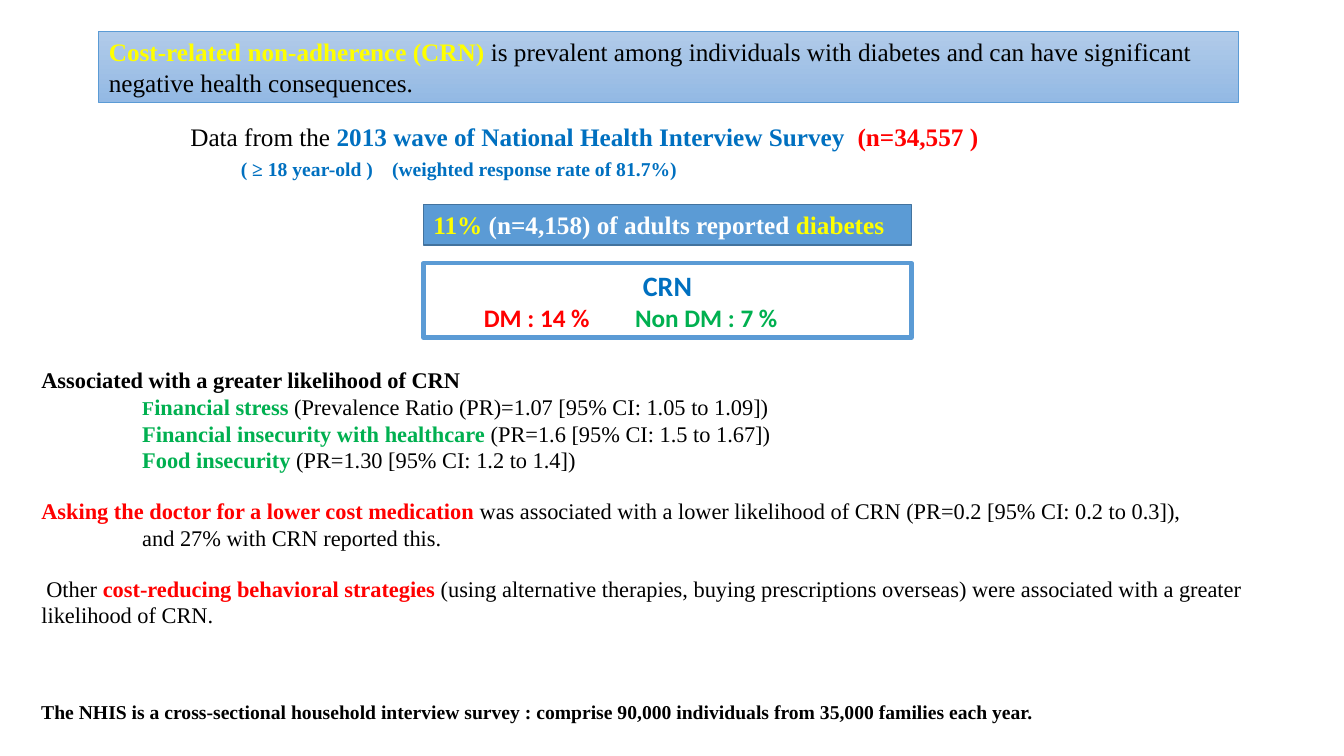
from lxml.etree import SubElement
from pptx import Presentation
from pptx.dml.color import RGBColor
from pptx.enum.shapes import MSO_SHAPE as Shape
from pptx.enum.text import MSO_ANCHOR as Anchor, MSO_AUTO_SIZE as AutoSize, PP_ALIGN as Align
from pptx.oxml.ns import qn
from pptx.util import Inches, Pt

BLACK = RGBColor(0x00, 0x00, 0x00)
WHITE = RGBColor(0xFF, 0xFF, 0xFF)
YELLOW = RGBColor(0xFF, 0xFF, 0x00)
RED = RGBColor(0xFF, 0x00, 0x00)
GREEN = RGBColor(0x00, 0xB0, 0x50)
BLUE = RGBColor(0x00, 0x70, 0xC0)
ACCENT = RGBColor(0x5B, 0x9B, 0xD5)
ACCENT_DARK = RGBColor(0x43, 0x73, 0x9E)
BANNER_TOP = RGBColor(0xB1, 0xCB, 0xE9)
BANNER_BOTTOM = RGBColor(0x93, 0xB9, 0xE4)
SERIF, SANS = "Times New Roman", "Calibri"

# Each run: text, size, colour, bold
BANNER = [{"runs": [
    ("Cost-related non-adherence (CRN)", 18, YELLOW, True),
    (" is prevalent among individuals with diabetes and can have significant "
     "negative health consequences.", 18, BLACK, False)]}]
SURVEY = [
    {"runs": [("Data from the ", 18, BLACK, False),
              ("2013 wave of National Health Interview Survey  ", 18, BLUE, True),
              ("(n=34,557 )", 18, RED, True)]},
    {"runs": [("\t( ≥ 18 year-old )\t(weighted response rate of 81.7%)", 14, BLUE, True),
              (" ", 18, BLUE, True)],
     "tabs": (2, 3.7)}]
DIABETES = [{"runs": [("11%", 18, YELLOW, True),
                      (" (n=4,158) of adults reported ", 18, WHITE, True),
                      ("diabetes", 18, YELLOW, True)]}]
RATES = [
    {"runs": [("CRN", 20, BLUE, True)], "align": Align.CENTER},
    {"runs": [("\tDM : 14 %", 18, RED, True), ("\tNon DM : 7 %", 18, GREEN, True)],
     "tabs": (0.17, 3.15)}]
FINDINGS = [
    {"runs": [("Associated with a greater likelihood of CRN", 16, BLACK, True)]},
    {"runs": [("F", 14, GREEN, True), ("inancial stress ", 16, GREEN, True),
              ("(Prevalence Ratio (PR)=1.07 [95% CI: 1.05 to 1.09])", 16, BLACK, False)],
     "indent": 1},
    {"runs": [("Financial insecurity with healthcare ", 16, GREEN, True),
              ("(PR=1.6 [95% CI: 1.5 to 1.67])", 16, BLACK, False)], "indent": 1},
    {"runs": [("Food insecurity", 16, GREEN, True),
              (" (PR=1.30 [95% CI: 1.2 to 1.4])", 16, BLACK, False)], "indent": 1},
    {"runs": [("Asking the doctor for a lower cost medication ", 16, RED, True),
              ("was associated with a lower likelihood of CRN (PR=0.2 [95% CI: 0.2 to 0.3]),",
               16, BLACK, False)], "before": 17},
    {"runs": [("and 27% with CRN reported this.", 16, BLACK, False)], "indent": 1},
    {"runs": [(" ", 14, BLACK, False), ("Other ", 16, BLACK, False),
              ("cost-reducing behavioral strategies ", 16, RED, True),
              ("(using alternative therapies, buying prescriptions overseas) were associated "
               "with a greater likelihood of CRN.", 16, BLACK, False)], "before": 17}]
FOOTNOTE = [{"runs": [
    ("The NHIS is a cross-sectional household interview survey : comprise 90,000 individuals "
     "from 35,000 families each year.", 14, BLACK, True)]}]

# Left, top, width, height as percentages of the slide
BANNER_BOX = (7.35, 4.13, 84.77, 9.47)
SURVEY_BOX = (13.43, 15.33, 76.37, 9.47)
DIABETES_BOX = (31.51, 27.07, 36.31, 5.33)
RATES_BOX = (31.51, 34.8, 36.31, 9.87)
FINDINGS_BOX = (2.33, 47.73, 95.5, 36.4)
FOOTNOTE_BOX = (2.33, 91.87, 77.57, 4.53)

presentation = Presentation()
presentation.slide_width, presentation.slide_height = Inches(13.33), Inches(7.5)
slide = presentation.slides.add_slide(presentation.slide_layouts[1])


def place(box):
    sides = (presentation.slide_width, presentation.slide_height) * 2
    return [int(side * share / 100) for side, share in zip(sides, box)]


def move(shape, box):
    shape.left, shape.top, shape.width, shape.height = place(box)
    return shape


def add_text_box(box):
    return slide.shapes.add_textbox(*place(box))


def add_box(box, fill, line, width):
    shape = slide.shapes.add_shape(Shape.RECTANGLE, *place(box))
    shape.shadow.inherit = False
    shape.fill.solid()
    shape.fill.fore_color.rgb = fill
    shape.line.color.rgb = line
    shape.line.width = Pt(width)
    return shape


def write(shape, content, anchor=Anchor.TOP, font=SERIF, wrap=True):
    frame = shape.text_frame
    frame.word_wrap = wrap
    frame.auto_size = AutoSize.NONE
    frame.vertical_anchor = anchor
    for index, item in enumerate(content):
        paragraph = frame.paragraphs[0] if index == 0 else frame.add_paragraph()
        paragraph.alignment = item.get("align", Align.LEFT)
        paragraph.space_before = Pt(item.get("before", 0))
        properties = paragraph._p.get_or_add_pPr()
        properties.set("marL", str(Inches(item.get("indent", 0))))
        properties.set("indent", "0")
        SubElement(properties, qn("a:buNone"))
        if "tabs" in item:
            stops = SubElement(properties, qn("a:tabLst"))
            for position in item["tabs"]:
                SubElement(stops, qn("a:tab"), pos=str(Inches(position)), algn="l")
        for text, size, color, bold in item["runs"]:
            run = paragraph.add_run()
            run.text = text
            run.font.name, run.font.size, run.font.bold = font, Pt(size), bold
            run.font.color.rgb = color


banner = move(slide.shapes.title, BANNER_BOX)
banner.fill.gradient()
banner.fill.gradient_angle = 270
for stop, color in zip(banner.fill.gradient_stops, (BANNER_TOP, BANNER_BOTTOM)):
    stop.color.rgb = color
banner.line.color.rgb = ACCENT
banner.line.width = Pt(0.5)

write(banner, BANNER, Anchor.MIDDLE)
write(move(slide.placeholders[1], FINDINGS_BOX), FINDINGS)
write(add_text_box(SURVEY_BOX), SURVEY)
write(add_box(DIABETES_BOX, ACCENT, ACCENT_DARK, 1), DIABETES, Anchor.MIDDLE, wrap=False)
write(add_box(RATES_BOX, WHITE, ACCENT, 3), RATES, Anchor.MIDDLE, SANS)
write(add_text_box(FOOTNOTE_BOX), FOOTNOTE)

presentation.save("out.pptx")
